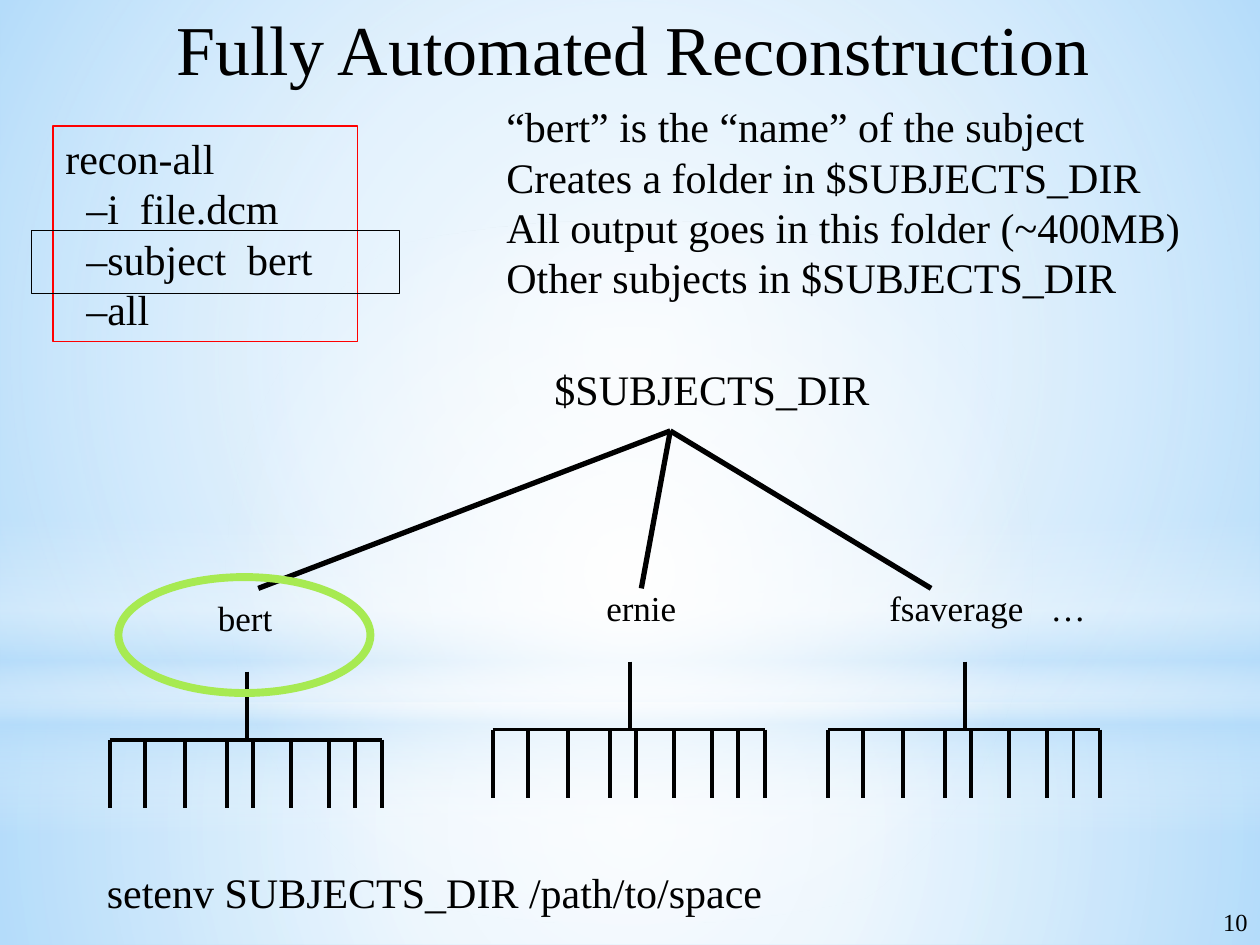
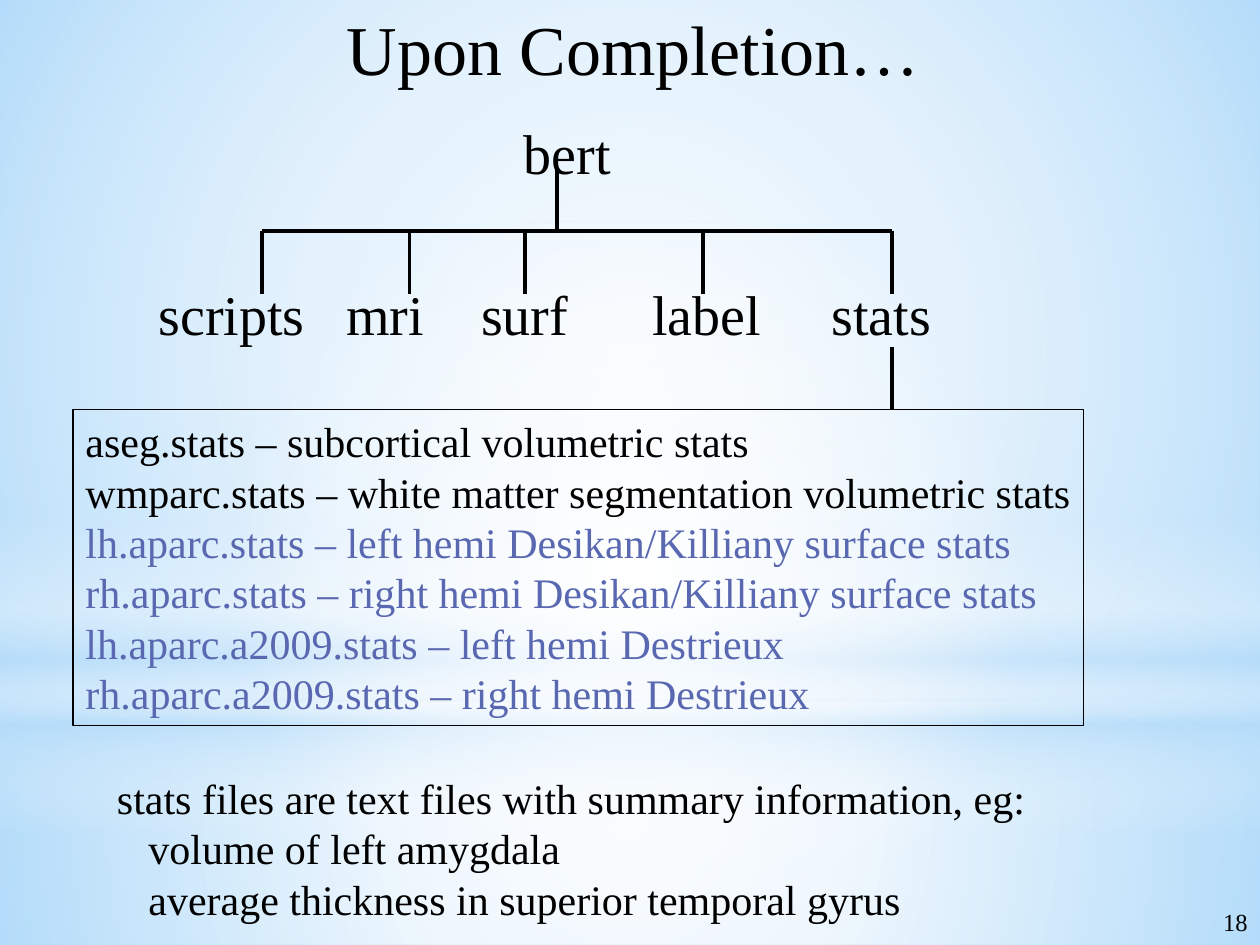
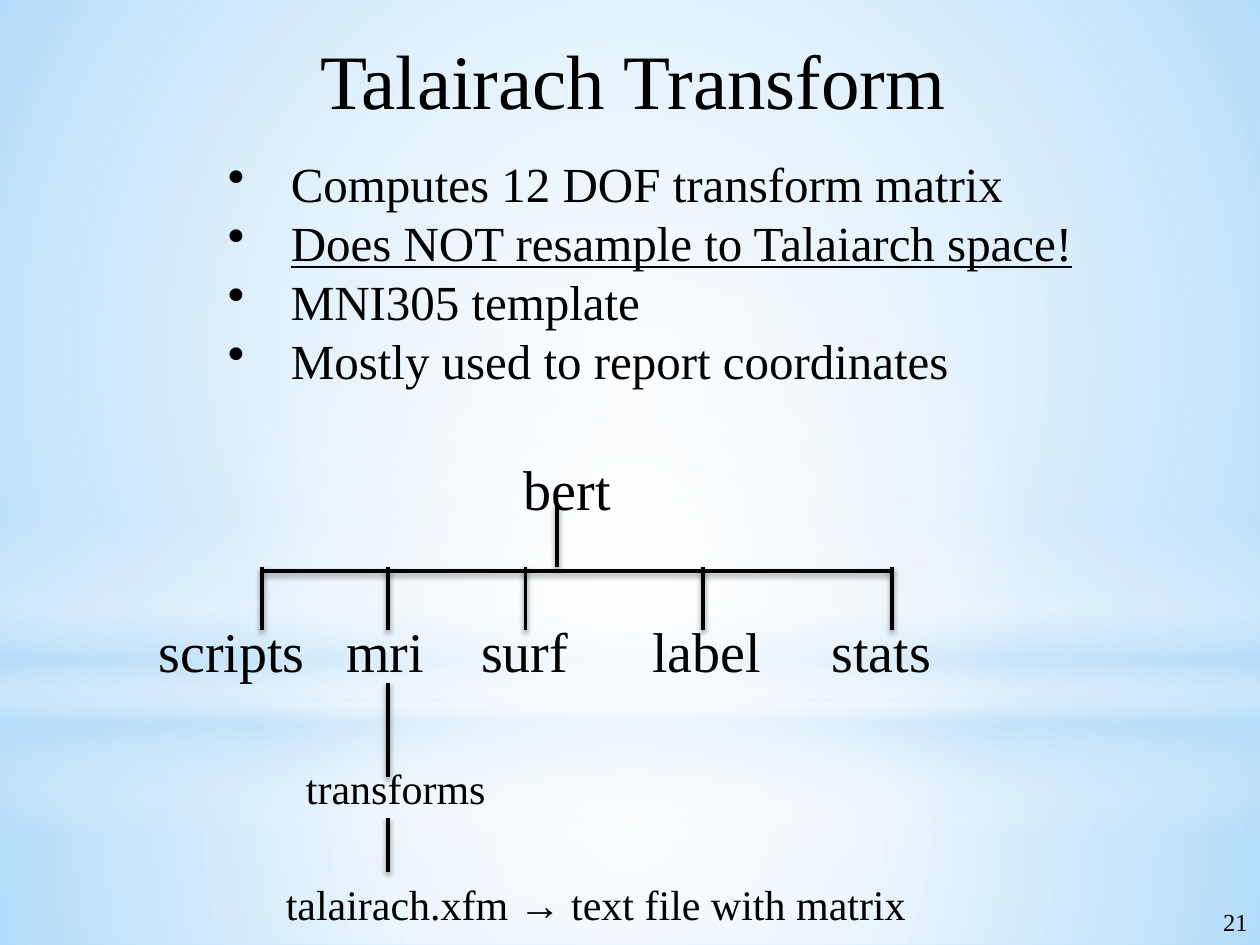
from lxml import etree
from pptx import Presentation
from pptx import util as u
from pptx.dml import color as dml
from pptx.enum import shapes, text
from pptx.oxml import ns

FONT = "Times New Roman"
BLACK, WHITE, SKY = "000000", "FFFFFF", "B4DCFA"
RED, LIME, VIOLET = "FF0000", "A7EA52", "5968B0"
LEFT, CENTER, RIGHT = text.PP_ALIGN.LEFT, text.PP_ALIGN.CENTER, text.PP_ALIGN.RIGHT
RECTANGLE, OVAL = shapes.MSO_SHAPE.RECTANGLE, shapes.MSO_SHAPE.OVAL
FOLDERS = {"scripts": 1.16, "mri": 2.65, "surf": 3.72, "label": 5.08, "stats": 6.5}
TEETH = (0, 0.28, 0.6, 0.93, 1.14, 1.44, 1.74, 1.95, 2.16)


def rgb(value):
    return dml.RGBColor.from_string(value)


def add_child(parent, tag, **attributes):
    child = etree.SubElement(parent, ns.qn(tag))
    for name, value in attributes.items():
        child.set(name, str(value))
    return child


def add_color(parent, value, alpha):
    add_child(add_child(parent, "a:srgbClr", val=value), "a:alpha", val=alpha * 1000)


class Slides:
    """Holds the shared style and the current page, and draws each kind of element."""

    def __init__(self):
        self.deck = Presentation()
        self.deck.slide_width, self.deck.slide_height = u.Inches(10), u.Inches(7.5)
        self.layout = self.deck.slide_layouts[6]
        self.page = None

    def add_page(self, title, number, top=-0.25, size=40):
        self.page = self.deck.slides.add_slide(self.layout)
        self.text((7.92, 7.15, 2.08, 0.5), [number], 14, align=RIGHT)
        self.text((1.1, top, 7.85, 1.25), [title], size, align=CENTER, middle=True)

    def draw_background(self):
        for holder in list(self.layout.placeholders):
            holder.element.getparent().remove(holder.element)
        fill = self.layout.background.fill
        fill.solid()
        fill.fore_color.rgb = rgb(SKY)
        self.page = self.deck.slides[0]
        floor = ((0, WHITE, 91), (37, WHITE, 76), (100, SKY, 79))
        sky = ((0, WHITE, 89), (48, WHITE, 62), (100, SKY, 79))
        horizon = ((0, WHITE, 0), (29, WHITE, 30), (45, SKY, 40),
                   (55, WHITE, 26), (65, SKY, 60), (100, WHITE, 0))
        glow = ((0, WHITE, 100), (56, WHITE, 0))
        for kind, at, stops, radial in (
            (RECTANGLE, (0, 5.58, 10, 1.92), floor, True),
            (RECTANGLE, (0, 0, 10, 5.58), sky, True),
            (RECTANGLE, (0, 4.12, 10, 2.5), horizon, False),
            (OVAL, (0, 1.75, 10, 5.58), glow, True),
        ):
            panel = self.shape(kind, at)
            self.gradient(panel, stops, radial)
            self.layout.shapes.element.append(panel.element)

    def gradient(self, shape, stops, radial):
        empty = shape.element.spPr.find(ns.qn("a:noFill"))
        fill = etree.Element(ns.qn("a:gradFill"), rotWithShape="1")
        stop_list = add_child(fill, "a:gsLst")
        for position, value, alpha in stops:
            add_color(add_child(stop_list, "a:gs", pos=position * 1000), value, alpha)
        if radial:
            circle = add_child(fill, "a:path", path="circle")
            add_child(circle, "a:fillToRect", l=50000, t=50000, r=50000, b=50000)
        else:
            add_child(fill, "a:lin", ang=5400000, scaled=0)
        shape.element.spPr.replace(empty, fill)

    def shape(self, kind, at, line=None, width=0.75):
        shape = self.page.shapes.add_shape(kind, *map(u.Inches, at))
        shape.shadow.inherit = False
        shape.fill.background()
        self.outline(shape, line, width)
        return shape

    def outline(self, shape, line, width=0.75):
        if line:
            shape.line.color.rgb = rgb(line)
            shape.line.width = u.Pt(width)
        else:
            shape.line.fill.background()

    def text(self, at, lines, size, align=LEFT, middle=False, wrap=True, spacing=None,
             line=None, bullet=None):
        box = self.page.shapes.add_textbox(*map(u.Inches, at))
        frame = box.text_frame
        frame.text = "\n".join(lines)
        frame.word_wrap = wrap
        if middle:
            frame.vertical_anchor = text.MSO_ANCHOR.MIDDLE
        self.outline(box, line)
        for para in frame.paragraphs:
            para.alignment = align
            if spacing:
                para.line_spacing = spacing
            if bullet:
                self.indent(para, 0.5, -0.5)
                add_child(para._p.get_or_add_pPr(), "a:buChar", char=bullet)
            for span in para.runs:
                span.font.name, span.font.size = FONT, u.Pt(size)
                span.font.color.rgb = rgb(BLACK)
        return box

    def indent(self, para, margin, first=0):
        properties = para._p.get_or_add_pPr()
        properties.set("marL", str(u.Inches(margin)))
        properties.set("indent", str(u.Inches(first)))

    def line(self, start, end, width=2.25, shadow=False, group=None):
        connector = (group or self.page).shapes.add_connector(
            shapes.MSO_CONNECTOR.STRAIGHT, *map(u.Inches, (*start, *end)))
        connector.line.color.rgb = rgb(BLACK)
        connector.line.width = u.Pt(width)
        effects = add_child(connector.element.spPr, "a:effectLst")
        if shadow:
            outer = add_child(effects, "a:outerShdw", blurRad=u.Pt(3.1), dist=u.Pt(1.8),
                              dir=5400000, rotWithShape=0)
            add_color(outer, BLACK, 45)
        return connector

    def comb(self, left, top):
        group = self.page.shapes.add_group_shape()
        bar, bottom, stem = top + 0.54, top + 1.08, left + 1.09
        self.line((stem, top), (stem, bar), group=group)
        self.line((left, bar), (left + TEETH[-1], bar), group=group)
        for tooth in TEETH:
            self.line((left + tooth, bar), (left + tooth, bottom), group=group)

    def folder_tree(self, top, mri, bar_drop=0, **style):
        self.text((4.06, top - 0.44, 1.2, 0.6), ["bert"], 32)
        for name, left in FOLDERS.items():
            self.text((left, top + 0.84, 1.5, 0.6), [name], 32)
        branch, bar = top + 0.5, top + 0.5 + bar_drop
        self.line((4.42, top), (4.42, branch), **style)
        self.line((2.08, bar), (7.08, bar), **style)
        for x in (2.08, mri, 4.17, 5.58, 7.08):
            self.line((x, branch), (x, branch + 0.5), **style)


def reconstruction(slides):
    slides.add_page("Fully Automated Reconstruction", "10")
    slides.text((0.42, 1, 2.42, 1.71),
                ["recon-all", "  –i  file.dcm", "  –subject  bert", "  –all"], 24, line=RED)
    slides.shape(RECTANGLE, (0.25, 1.83, 2.92, 0.5), BLACK)
    slides.text((3.92, 0.75, 5.75, 1.72), [
        "“bert” is the “name” of the subject",
        "Creates a folder in $SUBJECTS_DIR",
        "All output goes in this folder (~400MB)",
        "Other subjects in $SUBJECTS_DIR",
    ], 24)
    slides.text((3.39, 2.67, 4.52, 0.83), ["$SUBJECTS_DIR"], 24, align=CENTER, middle=True)
    slides.text((1.24, 4.75, 1.41, 0.5), ["bert"], 20, align=CENTER, spacing=0.8)
    ernie = slides.text((3.98, 4.67, 2.22, 0.5), ["ernie"], 20, align=CENTER, spacing=0.8)
    slides.text((6.96, 4.67, 1.4, 0.5), ["fsaverage"], 20, spacing=0.8)
    slides.text((8.24, 4.67, 0.6, 0.5), ["…"], 20, spacing=0.8)
    root = (5.32, 3.42)
    slides.line(root, (2.05, 4.67), 3)
    slides.line(root, (5.09, 4.67), 3).end_connect(ernie, 0)
    slides.line(root, (7.39, 4.67), 3)
    for left, top in ((0.87, 5.33), (3.91, 5.25), (6.57, 5.25)):
        slides.comb(left, top)
    slides.shape(OVAL, (0.94, 4.58, 2, 0.92), LIME, 4.5)
    slides.text((0.75, 6.83, 5.46, 0.51), ["setenv SUBJECTS_DIR /path/to/space"], 24, wrap=False)


def completion(slides):
    slides.add_page("Upon Completion…", "18")
    slides.folder_tree(1.33, mri=3.25)
    slides.line((7.08, 2.75), (7.08, 3.25))
    stats = slides.text((0.58, 3.25, 8.02, 2.51), [
        "aseg.stats – subcortical volumetric stats",
        "wmparc.stats – white matter segmentation volumetric stats",
        "lh.aparc.stats – left hemi Desikan/Killiany surface stats",
        "rh.aparc.stats – right hemi Desikan/Killiany surface stats",
        "lh.aparc.a2009.stats – left hemi Destrieux",
        "rh.aparc.a2009.stats – right hemi Destrieux",
    ], 24, wrap=False, line=BLACK)
    for para in stats.text_frame.paragraphs[2:]:
        para.runs[0].font.color.rgb = rgb(VIOLET)
    summary = slides.text((0.83, 6.08, 7.48, 1.31), [
        "stats files are text files with summary information, eg:",
        "volume of left amygdala",
        "average thickness in superior temporal gyrus",
    ], 24, wrap=False)
    for para in summary.text_frame.paragraphs[1:]:
        slides.indent(para, 0.25)


def talairach(slides):
    slides.add_page("Talairach Transform", "21", top=0, size=44)
    points = slides.text((1.71, 1.17, 7.79, 2.17), [
        "Computes 12 DOF transform matrix",
        "Does NOT resample to Talaiarch space!",
        "MNI305 template",
        "Mostly used to report coordinates",
    ], 28, bullet="•")
    points.text_frame.paragraphs[1].runs[0].font.underline = True
    style = {"width": 2, "shadow": True}
    slides.folder_tree(4, mri=3.08, bar_drop=0.03, **style)
    slides.line((3.08, 5.42), (3.08, 6.17), **style)
    slides.text((2.33, 6, 1.64, 0.51), ["transforms"], 24, wrap=False)
    slides.line((3.08, 6.92), (3.08, 6.49), **style)
    slides.text((2.17, 6.92, 5.16, 0.51), ["talairach.xfm → text file with matrix"], 24, wrap=False)


def main():
    slides = Slides()
    reconstruction(slides)
    completion(slides)
    talairach(slides)
    slides.draw_background()
    slides.deck.save("out.pptx")


if __name__ == "__main__":
    main()
